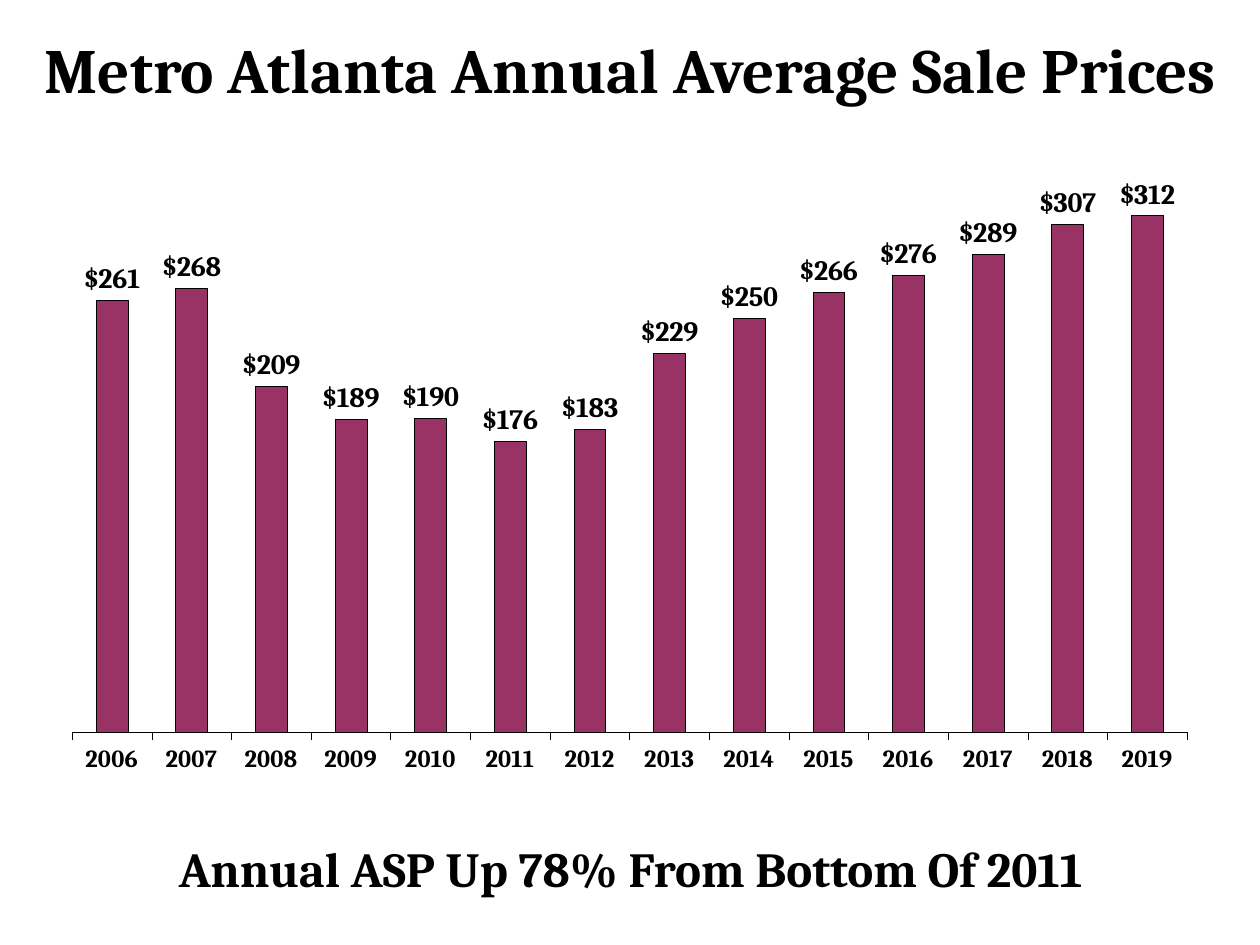
from dataclasses import dataclass

from lxml import etree
from pptx import Presentation
from pptx import util as u
from pptx.chart import data
from pptx.dml import color
from pptx.enum import chart as ch, text
from pptx.oxml import ns

PX_PER_INCH = 126
PRICES = dict(zip(range(2006, 2020), (261, 268, 209, 189, 190, 176, 183,
                                      229, 250, 266, 276, 289, 307, 312)))


@dataclass(frozen=True)
class Theme:
    font: str = "Cambria"
    ink: str = "000000"
    bar: str = "993366"
    title: int = 36
    footer: int = 28
    label: int = 16
    axis: int = 14
    hairline: float = 0.06


def px(n):
    return u.Emu(round(n * 914400 / PX_PER_INCH))


def assign(obj, values):
    for name, value in values.items():
        setattr(obj, name, value)


class Deck:
    def __init__(self, theme, width, height):
        self.theme = theme
        self.prs = Presentation()
        assign(self.prs, {"slide_width": px(width), "slide_height": px(height)})
        self.s = self.prs.slides.add_slide(self.prs.slide_layouts[6])

    def style_font(self, font, size):
        assign(font, {"name": self.theme.font, "size": u.Pt(size), "bold": True})
        font.color.rgb = color.RGBColor.from_string(self.theme.ink)

    def style_line(self, line):
        line.color.rgb = color.RGBColor.from_string(self.theme.ink)
        line.width = u.Pt(self.theme.hairline)

    def heading(self, words, box, size, anchor, top=0):
        sp = self.s.shapes.add_textbox(*map(px, box))
        tf = sp.text_frame
        assign(tf, {"word_wrap": True, "vertical_anchor": anchor,
                    "margin_top": px(top), "margin_bottom": 0})
        p = tf.paragraphs[0]
        p.alignment = text.PP_ALIGN.CENTER
        r = p.add_run()
        r.text = words
        self.style_font(r.font, size)

    def columns(self, name, values, box, plot_area, top_value):
        chart_data = data.CategoryChartData()
        chart_data.categories = [str(c) for c in values]
        chart_data.add_series(name, list(values.values()))
        chart = self.s.shapes.add_chart(
            ch.XL_CHART_TYPE.COLUMN_CLUSTERED, *map(px, box), chart_data).chart
        assign(chart, {"has_legend": False, "has_title": False})
        self.style_font(chart.font, self.theme.axis)

        assign(chart.value_axis, {"visible": False, "has_major_gridlines": False,
                                  "minimum_scale": 0, "maximum_scale": top_value})
        axis = chart.category_axis
        assign(axis, {"major_tick_mark": ch.XL_TICK_MARK.OUTSIDE,
                      "tick_label_position": ch.XL_TICK_LABEL_POSITION.LOW})
        self.style_font(axis.tick_labels.font, self.theme.axis)
        self.style_line(axis.format.line)

        plot = chart.plots[0]
        assign(plot, {"gap_width": 150, "vary_by_categories": False,
                      "has_data_labels": True})
        labels = plot.data_labels
        assign(labels, {"show_value": True, "number_format": r"\$#,##0",
                        "number_format_is_linked": False,
                        "position": ch.XL_LABEL_POSITION.OUTSIDE_END})
        self.style_font(labels.font, self.theme.label)
        bars = plot.series[0].format
        bars.fill.solid()
        bars.fill.fore_color.rgb = color.RGBColor.from_string(self.theme.bar)
        self.style_line(bars.line)
        self.place_plot(chart, plot_area)

    def place_plot(self, chart, fractions):
        """Fix the inner plot area as x, y, w, h fractions of the chart."""
        area = chart.element.find(".//" + ns.qn("c:plotArea"))
        for old in area.findall(ns.qn("c:layout")):
            area.remove(old)
        layout = etree.Element(ns.qn("c:layout"))
        area.insert(0, layout)
        manual = etree.SubElement(layout, ns.qn("c:manualLayout"))
        entries = [("layoutTarget", "inner"), ("xMode", "edge"), ("yMode", "edge")]
        entries += zip("xywh", fractions)
        for tag, value in entries:
            etree.SubElement(manual, ns.qn("c:" + tag)).set("val", str(value))


def main():
    theme = Theme()
    deck = Deck(theme, 1260, 945)
    deck.heading("Annual ASP Up 78% From Bottom Of 2011", (32, 819, 1197, 73),
                 theme.footer, text.MSO_ANCHOR.TOP, top=20)
    deck.columns("Average sale price", PRICES, (63, 89, 1124, 732),
                 (0.008, 0.087, 0.992, 0.792), 350)
    deck.heading("Metro Atlanta Annual Average Sale Prices", (0, 42, 1260, 53),
                 theme.title, text.MSO_ANCHOR.MIDDLE)
    deck.prs.save("out.pptx")


if __name__ == "__main__":
    main()
